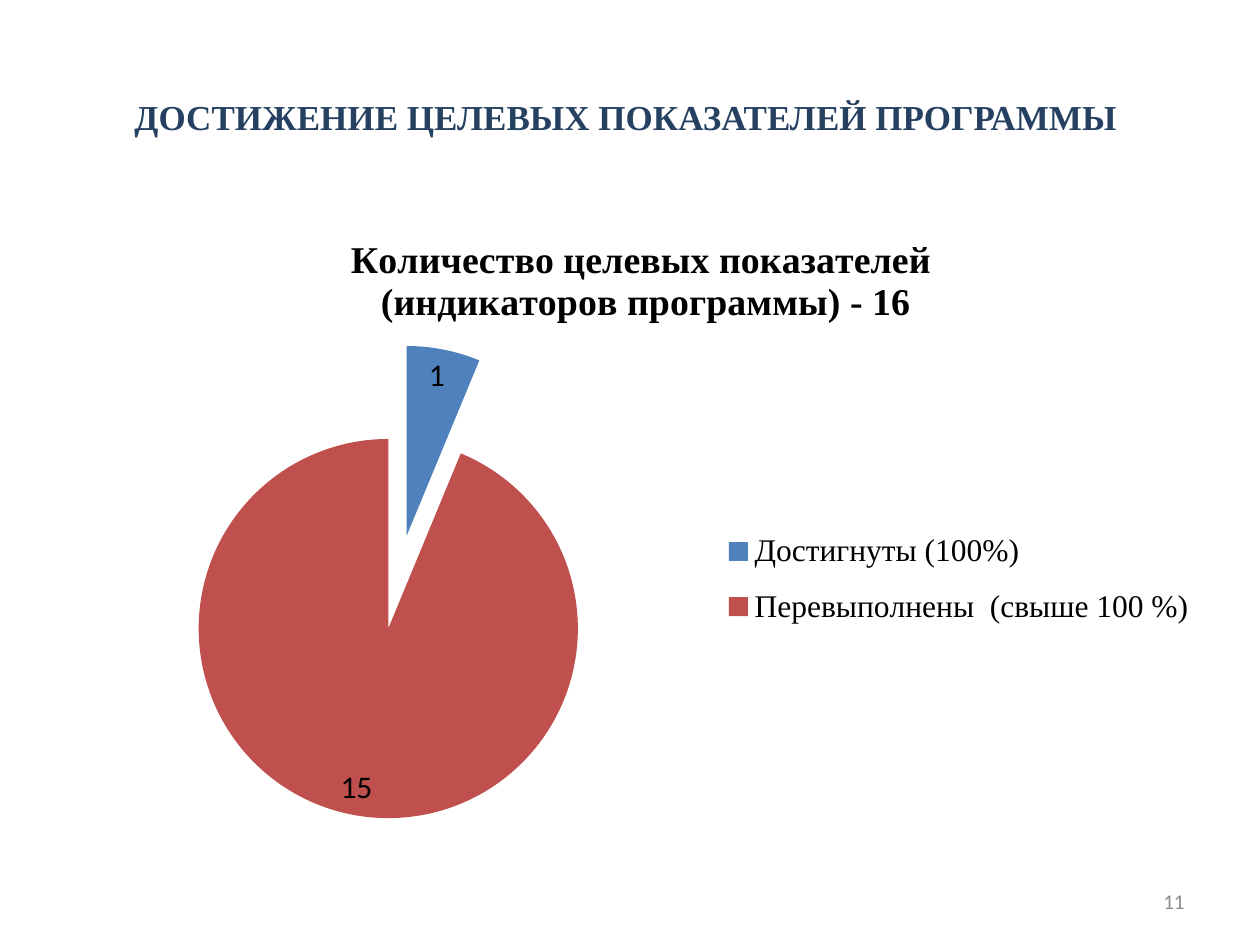
from lxml import etree
from pptx import Presentation
from pptx.chart.data import CategoryChartData
from pptx.dml.color import RGBColor
from pptx.enum.chart import XL_CHART_TYPE, XL_LABEL_POSITION, XL_LEGEND_POSITION
from pptx.enum.text import MSO_ANCHOR, PP_ALIGN
from pptx.oxml.ns import qn
from pptx.util import Inches, Pt

PIE = XL_CHART_TYPE.PIE
LEGEND_RIGHT = XL_LEGEND_POSITION.RIGHT
BEST_FIT = XL_LABEL_POSITION.BEST_FIT
MIDDLE = MSO_ANCHOR.MIDDLE
CENTER = PP_ALIGN.CENTER
RIGHT = PP_ALIGN.RIGHT
SERIF = "Times New Roman"
SANS = "Calibri"
TITLE_ONLY_LAYOUT = 5
EXPLOSION = 25
PIE_AREA = (0.07, 0.21, 0.43, 0.76)
LEGEND_AREA = (0.57, 0.48, 0.42, 0.21)
INDICATORS = [
    ("Достигнуты (100%)", 1, "4F81BD"),
    ("Перевыполнены  (свыше 100 %)", 15, "C0504D"),
]


def style_font(font, name, size, color, bold=False):
    font.name = name
    font.size = Pt(size)
    font.bold = bold
    font.color.rgb = RGBColor.from_string(color)


def fill_text(shape, text, alignment, *font_style):
    text_frame = shape.text_frame
    text_frame.text = text
    text_frame.word_wrap = True
    text_frame.vertical_anchor = MIDDLE
    paragraph = text_frame.paragraphs[0]
    paragraph.alignment = alignment
    style_font(paragraph.runs[0].font, *font_style)


def place_title(slide, left, top, width, height):
    title = slide.shapes.title
    title.left, title.top, title.width, title.height = left, top, width, height
    fill_text(title, "ДОСТИЖЕНИЕ ЦЕЛЕВЫХ ПОКАЗАТЕЛЕЙ ПРОГРАММЫ ", CENTER,
              SERIF, 20, "254061", True)


def explode_slices(series):
    explosion = etree.Element(qn("c:explosion"), val=str(EXPLOSION))
    series._element.find(qn("c:tx")).addnext(explosion)


def build_layout(area, inner=False):
    layout = etree.Element(qn("c:layout"))
    manual = etree.SubElement(layout, qn("c:manualLayout"))
    settings = [("xMode", "edge"), ("yMode", "edge"), *zip("xywh", area)]
    if inner:
        settings.insert(0, ("layoutTarget", "inner"))
    for name, value in settings:
        etree.SubElement(manual, qn(f"c:{name}"), val=str(value))
    return layout


def arrange_chart(chart):
    plot_area = chart.plots[0]._element.getparent()
    for part, name in ((plot_area, "c:layout"), (chart.legend._element, "c:layout")):
        for layout in part.findall(qn(name)):
            part.remove(layout)
    plot_area.insert(0, build_layout(PIE_AREA, inner=True))
    legend_position = chart.legend._element.find(qn("c:legendPos"))
    legend_position.addnext(build_layout(LEGEND_AREA))


def add_indicator_chart(slide, left, top, width, height):
    names, counts, colors = zip(*INDICATORS)
    chart_data = CategoryChartData()
    chart_data.categories = names
    chart_data.add_series("Показатели", counts)
    chart = slide.shapes.add_chart(PIE, left, top, width, height, chart_data).chart
    style_font(chart.font, SANS, 18, "000000")

    chart.has_title = True
    title_frame = chart.chart_title.text_frame
    title_frame.text = "Количество целевых показателей\n (индикаторов программы) - 16"
    for paragraph in title_frame.paragraphs:
        style_font(paragraph.runs[0].font, SERIF, 21.6, "000000", True)

    chart.has_legend = True
    chart.legend.position = LEGEND_RIGHT
    chart.legend.include_in_layout = False
    style_font(chart.legend.font, SERIF, 18, "000000")
    arrange_chart(chart)

    plot = chart.plots[0]
    plot.vary_by_categories = True
    series = plot.series[0]
    explode_slices(series)
    for index, color in enumerate(colors):
        fill = series.points[index].format.fill
        fill.solid()
        fill.fore_color.rgb = RGBColor.from_string(color)

    labels = series.data_labels
    labels.show_value = True
    labels.position = BEST_FIT
    style_font(labels.font, SANS, 18, "000000")


def add_slide_number(slide, left, top, width, height):
    number = slide.shapes.add_textbox(left, top, width, height)
    fill_text(number, "11", RIGHT, SANS, 12, "8C8C8C")


def main():
    presentation = Presentation()
    presentation.slide_width = Inches(10)
    presentation.slide_height = Inches(7.5)
    slide = presentation.slides.add_slide(presentation.slide_layouts[TITLE_ONLY_LAYOUT])
    place_title(slide, Inches(0.5), Inches(0.3), Inches(9), Inches(1.25))
    add_indicator_chart(slide, Inches(0.59), Inches(1.7), Inches(9), Inches(4.95))
    add_slide_number(slide, Inches(7.17), Inches(6.95), Inches(2.33), Inches(0.4))
    presentation.save("out.pptx")


if __name__ == "__main__":
    main()
